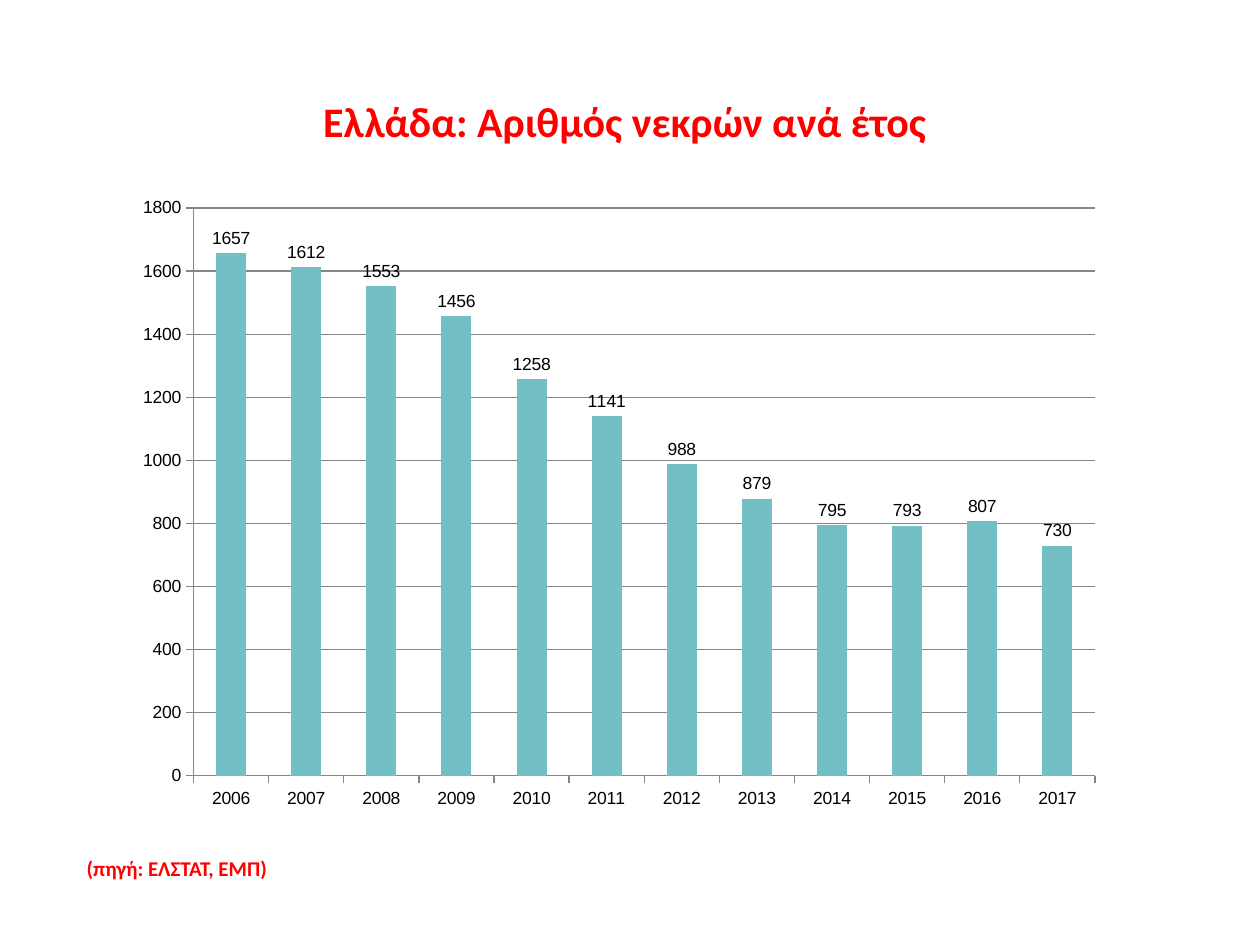
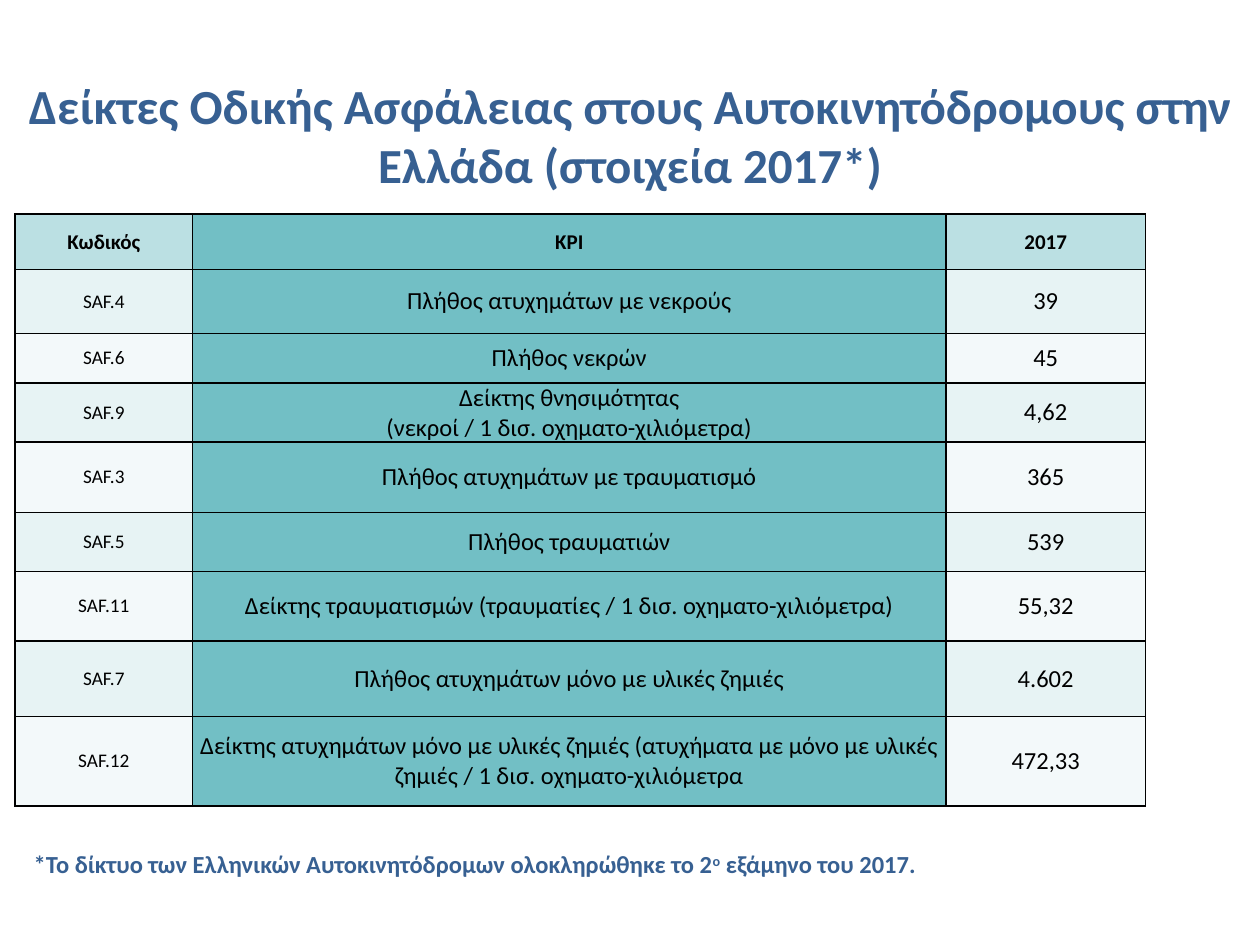
import pptx
import pptx.chart.data
import pptx.dml.color
import pptx.enum.chart
import pptx.enum.text
import pptx.oxml
import pptx.oxml.ns
import pptx.util

Pt = pptx.util.Pt
RGBColor = pptx.dml.color.RGBColor
Align = pptx.enum.text.PP_ALIGN
Anchor = pptx.enum.text.MSO_ANCHOR

BLACK = RGBColor(0x00, 0x00, 0x00)
RED = RGBColor(0xFF, 0x00, 0x00)
BLUE = RGBColor(0x37, 0x60, 0x92)
TEAL = RGBColor(0x72, 0xBF, 0xC5)
HEADER_TEAL = RGBColor(0xBB, 0xE0, 0xE3)
BANDS = RGBColor(0xE7, 0xF3, 0xF4), RGBColor(0xF3, 0xF9, 0xFA)
GREY = RGBColor(0x86, 0x86, 0x86)

BODY_FONT = "Calibri"
CHART_FONT = "Arial"

DEATHS = dict(zip(range(2006, 2018), (
    1657, 1612, 1553, 1456, 1258, 1141, 988, 879, 795, 793, 807, 730)))

HEADINGS = "Κωδικός", "KPI", "2017"
INDICATORS = [
    ("SAF.4", "Πλήθος ατυχημάτων με νεκρούς", "39"),
    ("SAF.6", "Πλήθος νεκρών", "45"),
    ("SAF.9", "Δείκτης θνησιμότητας\n(νεκροί / 1 δισ. οχηματο-χιλιόμετρα)", "4,62"),
    ("SAF.3", "Πλήθος ατυχημάτων με τραυματισμό", "365"),
    ("SAF.5", "Πλήθος τραυματιών", "539"),
    ("SAF.11", "Δείκτης τραυματισμών (τραυματίες / 1 δισ. οχηματο-χιλιόμετρα)", "55,32"),
    ("SAF.7", "Πλήθος ατυχημάτων μόνο με υλικές ζημιές", "4.602"),
    ("SAF.12", "Δείκτης ατυχημάτων μόνο με υλικές ζημιές (ατυχήματα με μόνο με υλικές "
               "ζημιές / 1 δισ. οχηματο-χιλιόμετρα", "472,33"),
]
COLUMN_WIDTHS = 101.5, 430.5, 114
ROW_HEIGHTS = 31.7, 36.5, 28.3, 31.7, 40.3, 33.8, 39.6, 43.2, 51.1


def write_text(frame, text, size, color=BLACK, bold=False, align=Align.LEFT):
    """Newlines part paragraphs; a pair of carets encloses a superscript."""
    for index, line in enumerate(text.split("\n")):
        paragraph = frame.paragraphs[0] if index == 0 else frame.add_paragraph()
        paragraph.alignment = align
        for position, piece in enumerate(line.split("^")):
            run = paragraph.add_run()
            run.text = piece
            run.font.name = BODY_FONT
            run.font.size = Pt(size)
            run.font.bold = bold
            run.font.color.rgb = color
            if position % 2:
                run.font._element.set("baseline", "30000")


def add_text(slide, box, text, wrap=True, anchor=Anchor.MIDDLE, **style):
    frame = slide.shapes.add_textbox(*map(Pt, box)).text_frame
    frame.word_wrap = wrap
    frame.vertical_anchor = anchor
    write_text(frame, text, bold=True, **style)
    return frame


def add_title(slide, box, text, size, color):
    add_text(slide, box, text, size=size, color=color, align=Align.CENTER)


def add_deaths_chart(slide, box):
    data = pptx.chart.data.CategoryChartData()
    data.categories = [str(year) for year in DEATHS]
    data.add_series("Series 1", DEATHS.values())
    chart = slide.shapes.add_chart(
        pptx.enum.chart.XL_CHART_TYPE.COLUMN_CLUSTERED, *map(Pt, box), data).chart
    chart.has_legend = False
    chart.has_title = False
    chart.font.name = CHART_FONT
    chart.font.size = Pt(10)
    chart.font.color.rgb = BLACK

    columns = chart.plots[0]
    columns.gap_width = 150
    columns.vary_by_categories = False
    columns.series[0].format.fill.solid()
    columns.series[0].format.fill.fore_color.rgb = TEAL
    columns.has_data_labels = True
    columns.data_labels.show_value = True
    columns.data_labels.position = pptx.enum.chart.XL_LABEL_POSITION.OUTSIDE_END

    deaths_axis = chart.value_axis
    deaths_axis.minimum_scale = 0
    deaths_axis.maximum_scale = 1800
    deaths_axis.major_unit = 200
    deaths_axis.has_major_gridlines = True
    for line in (deaths_axis.major_gridlines.format.line,
                 deaths_axis.format.line, chart.category_axis.format.line):
        line.color.rgb = GREY
        line.width = Pt(0.75)
    for axis in (deaths_axis, chart.category_axis):
        axis.major_tick_mark = pptx.enum.chart.XL_TICK_MARK.OUTSIDE


def add_borders(cell):
    properties = cell._tc.get_or_add_tcPr()
    for index, side in enumerate(("lnL", "lnR", "lnT", "lnB")):
        properties.insert(index, pptx.oxml.parse_xml(
            f'<a:{side} {pptx.oxml.ns.nsdecls("a")} w="{Pt(1)}"><a:solidFill>'
            f'<a:srgbClr val="{BLACK}"/></a:solidFill></a:{side}>'))


def fill_cell(cell, text, fill, **style):
    cell.margin_left = cell.margin_right = cell.margin_top = cell.margin_bottom = 0
    cell.vertical_anchor = Anchor.MIDDLE
    cell.fill.solid()
    cell.fill.fore_color.rgb = fill
    add_borders(cell)
    write_text(cell.text_frame, text, align=Align.CENTER, **style)


def add_indicator_table(slide, left, top):
    rows = [HEADINGS, *INDICATORS]
    table = slide.shapes.add_table(
        len(rows), len(HEADINGS), Pt(left), Pt(top),
        Pt(sum(COLUMN_WIDTHS)), Pt(sum(ROW_HEIGHTS))).table
    for column, width in zip(table.columns, COLUMN_WIDTHS):
        column.width = Pt(width)
    for row, height in zip(table.rows, ROW_HEIGHTS):
        row.height = Pt(height)
    for r, texts in enumerate(rows):
        outer_fill = BANDS[(r - 1) % 2] if r else HEADER_TEAL
        sizes = (11, 14, 14) if r else (12, 12, 12)
        fills = outer_fill, TEAL, outer_fill
        for c, (text, size, fill) in enumerate(zip(texts, sizes, fills)):
            fill_cell(table.cell(r, c), text, fill, size=size, bold=r == 0)


def main():
    deck = pptx.Presentation()
    deck.slide_width, deck.slide_height = Pt(720), Pt(540)
    blank = deck.slide_layouts[6]

    deaths = deck.slides.add_slide(blank)
    add_title(deaths, (-3, 49, 720, 39.6), "Ελλάδα: Αριθμός νεκρών ανά έτος", 24, RED)
    source = add_text(deaths, (42.5, 485.3, 119, 21.8), "(πηγή: ΕΛΣΤΑΤ, ΕΜΠ)",
                      wrap=False, anchor=Anchor.TOP, size=12, color=RED)
    source.auto_size = pptx.enum.text.MSO_AUTO_SIZE.SHAPE_TO_FIT_TEXT
    add_deaths_chart(deaths, (70.5, 106, 566.5, 363))

    indicators = deck.slides.add_slide(blank)
    add_title(indicators, (0, 43.2, 720, 67.7),
              "Δείκτες Οδικής Ασφάλειας στους Αυτοκινητόδρομους στην Ελλάδα "
              "(στοιχεία 2017*)", 28, BLUE)
    add_indicator_table(indicators, 8.6, 122.4)
    add_text(indicators, (12.2, 473.8, 720, 39.6),
             "*Το δίκτυο των Ελληνικών Αυτοκινητόδρομων ολοκληρώθηκε το 2^ο^ "
             "εξάμηνο του 2017.", size=14, color=BLUE)

    deck.save("out.pptx")


if __name__ == "__main__":
    main()
